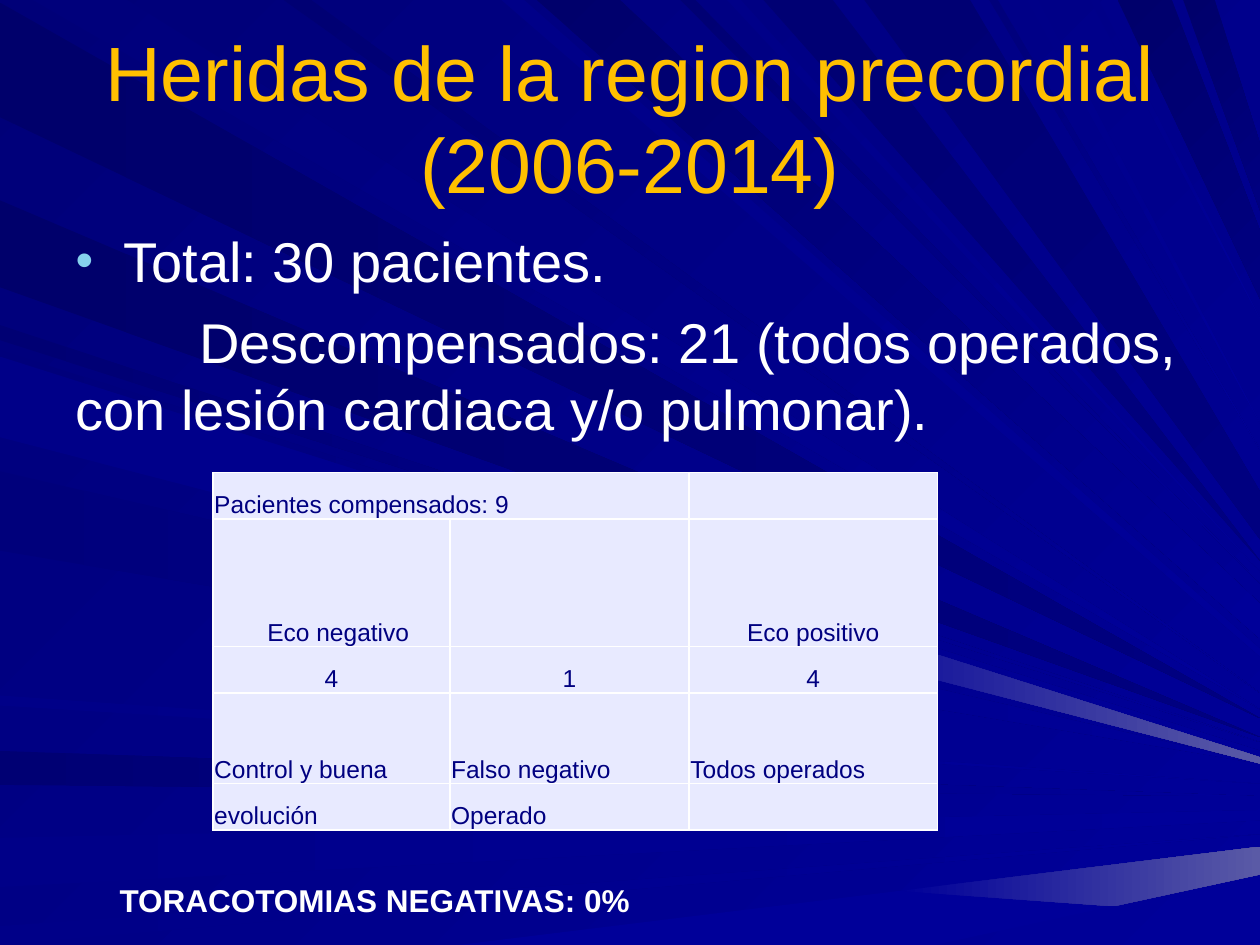
from pptx import Presentation
from pptx.dml.color import RGBColor
from pptx.enum.text import MSO_ANCHOR as Anchor, MSO_AUTO_SIZE as AutoSize, PP_ALIGN as Align
from pptx.oxml import parse_xml
from pptx.oxml.ns import nsdecls
from pptx.util import Inches, Pt

NAVY, BLUE, WHITE, GOLD, SKY, PALE = "000080", "000099", "FFFFFF", "FFC000", "86D1EC", "E8EAFF"
DEEP, DARK, MID, SOFT = "00006B", "000073", "00007B", "000088"
HAZE = "5A5AA6"

EDGES = {
    "left": (lambda y: (0, y), 0),
    "top": (lambda x: (x, 0), 45),
    "bottom": (lambda x: (x, 7.5), 0),
}
RAYS = [
    ("left", (0.02, 0.93), (5.7,), DEEP, NAVY),
    ("top", (0.26, 1.01), (5.63,), MID, BLUE),
    ("left", (5.96, 6.23), (6.32,), DARK, BLUE),
    ("left", (6.65, 7.04), (6.43, 6.51), SOFT, BLUE),
    ("left", (7.35, 7.5), (6.62,), SOFT, BLUE),
    ("bottom", (3.64, 7.42), (6.72, 6.94), BLUE, BLUE),
    ("left", (2.58, 2.7), (5.89,), DARK, BLUE),
    ("left", (1.59, 2.28), (5.85,), DEEP, NAVY),
    ("top", (3.98, 4.16), (5.21, 5.15), SOFT, BLUE),
    ("top", (4.26, 4.92), (5.07, 4.79), DEEP, BLUE),
    ("top", (5.4, 5.52), (4.63,), DARK, BLUE),
    ("top", (6.06, 6.61), (4.45,), DARK, NAVY),
    ("top", (8.87, 9.3), (2.37, 1.83), DEEP, NAVY),
    ("top", (9.39, 9.64), (1.67, 1.14), DEEP, NAVY),
    ("left", (2.78, 3.42), (5.96, 6.02), MID, BLUE),
    ("left", (3.74, 4.37), (6.06,), MID, BLUE),
    ("left", (5.52, 5.6), (6.22,), SOFT, BLUE),
    ("top", (2.25, 2.47), (5.5,), DARK, BLUE),
    ("top", (5.77, 5.88), (4.54,), SOFT, BLUE),
    ("top", (6.86, 7.7), (4.28, 3.9), DARK, NAVY),
    ("top", (7.85, 7.92), (3.57,), MID, BLUE),
    ("top", (8.15, 8.24), (3.36,), SOFT, BLUE),
    ("top", (8.65, 8.72), (2.53,), SOFT, BLUE),
    ("left", (2.83, 3.47), (6.01, 6.06), SOFT, BLUE),
]
HAZY_FROM = {5: 0.55, 23: 0.635}

ROWS = [
    ["Pacientes compensados: 9", "", ""],
    ["Eco negativo", "", "Eco positivo"],
    ["4", "1", "4"],
    ["Control y buena", "Falso negativo", "Todos operados"],
    ["evolución", "Operado", ""],
]
CENTRED_ROWS = (1, 2)


def rgb(value):
    return RGBColor.from_string(value)


def between(start, end, part):
    return tuple(a + (b - a) * part for a, b in zip(start, end))


class Deck:
    font = "Arial"

    def __init__(self, prs):
        self.s = prs.slides.add_slide(prs.slide_layouts[1])

    def paint(self, fill, start, end, angle):
        if start == end:
            fill.solid()
            fill.fore_color.rgb = rgb(start)
            return
        fill.gradient()
        fill.gradient_angle = (360 - angle) % 360
        for stop, value in zip(fill.gradient_stops, (start, end)):
            stop.color.rgb = rgb(value)

    def place(self, sp, left, top, width, height):
        sp.left, sp.top = Inches(left), Inches(top)
        sp.width, sp.height = Inches(width), Inches(height)

    def style(self, p, size, color, bold=False, align=None):
        p.alignment = align
        for r in p.runs:
            r.font.name, r.font.size, r.font.bold = self.font, Pt(size), bold
            r.font.color.rgb = rgb(color)

    def polygon(self, group, points, start, end, angle):
        corners = [(Inches(x), Inches(y)) for x, y in points]
        builder = group.shapes.build_freeform(*corners[0])
        builder.add_line_segments(corners[1:], close=True)
        sp = builder.convert_to_shape()
        sp.shadow.inherit = False
        self.paint(sp.fill, start, end, angle)
        sp.line.fill.background()

    def rays(self, rays):
        group = self.s.shapes.add_group_shape()
        for i, (edge, base, tips, start, end) in enumerate(rays):
            locate, angle = EDGES[edge]
            a, b = map(locate, base)
            tip_a, tip_b = (10, tips[0]), (10, tips[-1])
            cut = HAZY_FROM.get(i, 1)
            cut_a, cut_b = between(a, tip_a, cut), between(b, tip_b, cut)
            self.polygon(group, [a, cut_a, cut_b, b], start, end, angle)
            if cut < 1:
                self.polygon(group, [cut_a, tip_a, tip_b, cut_b], BLUE, HAZE, angle)
        self.s.shapes.element.insert(2, group.element)

    def title(self, text, *box):
        sp = self.s.shapes.title
        self.place(sp, *box)
        tf = sp.text_frame
        tf.text = text
        tf.auto_size = AutoSize.NONE
        tf.vertical_anchor = Anchor.MIDDLE
        self.style(tf.paragraphs[0], 44, GOLD, align=Align.CENTER)

    def body(self, bullet, detail, *box):
        sp = self.s.placeholders[1]
        self.place(sp, *box)
        tf = sp.text_frame
        tf.auto_size = AutoSize.NONE
        tf.text = bullet
        first, second = tf.paragraphs[0], tf.add_paragraph()
        second.text = detail
        marker = ('<a:buClr %s><a:srgbClr val="' + SKY + '"/></a:buClr>',
                  '<a:buSzPct %s val="90000"/>', '<a:buFont %s typeface="Arial"/>',
                  '<a:buChar %s char="•"/>')
        for p, margin, indent, tags in ((first, 0.38, -0.38, marker), (second, 0, 0.98, ("<a:buNone %s/>",))):
            pPr = p._p.get_or_add_pPr()
            pPr.set("marL", str(Inches(margin)))
            pPr.set("indent", str(Inches(indent)))
            for tag in tags:
                pPr.append(parse_xml(tag % nsdecls("a")))
            self.style(p, 32, WHITE)
        first.space_before, second.space_before = Pt(0), Pt(7.5)

    def borders(self, cell):
        tcPr = cell._tc.get_or_add_tcPr()
        for i, side in enumerate("LRTB"):
            tcPr.insert(i, parse_xml(
                f'<a:ln{side} {nsdecls("a")} w="{Pt(1)}"><a:solidFill>'
                f'<a:srgbClr val="{WHITE}"/></a:solidFill></a:ln{side}>'))

    def table(self, rows, widths, heights, left, top):
        frame = self.s.shapes.add_table(len(rows), len(widths), Inches(left), Inches(top),
                                        Inches(sum(widths)), Inches(sum(heights)))
        table = frame.table
        table.first_row = table.horz_banding = False
        for column, width in zip(table.columns, widths):
            column.width = Inches(width)
        for i, (row, height) in enumerate(zip(rows, heights)):
            table.rows[i].height = Inches(height)
            for j, text in enumerate(row):
                cell = table.cell(i, j)
                cell.text = text
                cell.vertical_anchor = Anchor.BOTTOM
                cell.margin_left = cell.margin_right = cell.margin_top = Inches(0.01)
                cell.margin_bottom = 0
                cell.fill.solid()
                cell.fill.fore_color.rgb = rgb(PALE)
                self.borders(cell)
                align = Align.CENTER if i in CENTRED_ROWS else Align.LEFT
                self.style(cell.text_frame.paragraphs[0], 14, NAVY, align=align)
        table.cell(0, 0).merge(table.cell(0, 1))
        table.cell(1, 0).margin_left = Inches(0.12)

    def note(self, text, *box):
        sp = self.s.shapes.add_textbox(*map(Inches, box))
        tf = sp.text_frame
        tf.text = text
        tf.word_wrap = False
        tf.auto_size = AutoSize.SHAPE_TO_FIT_TEXT
        self.style(tf.paragraphs[0], 18, WHITE, bold=True)


def main():
    prs = Presentation()
    prs.slide_width, prs.slide_height = Inches(10), Inches(7.5)
    deck = Deck(prs)
    deck.paint(deck.s.background.fill, "000078", BLUE, 45)
    deck.rays(RAYS)
    deck.title("Heridas de la region precordial (2006-2014)", 0.5, 0.3, 9, 1.25)
    deck.body("Total: 30 pacientes.",
              "Descompensados: 21 (todos operados, con lesión cardiaca y/o pulmonar).",
              0.5, 1.75, 9, 4.95)
    deck.table(ROWS, [1.88, 1.9, 1.97], [0.37, 1.01, 0.37, 0.72, 0.37], 1.69, 3.75)
    deck.note("TORACOTOMIAS NEGATIVAS: 0%", 0.85, 6.94, 4.29, 0.4)
    prs.save("out.pptx")


if __name__ == "__main__":
    main()
